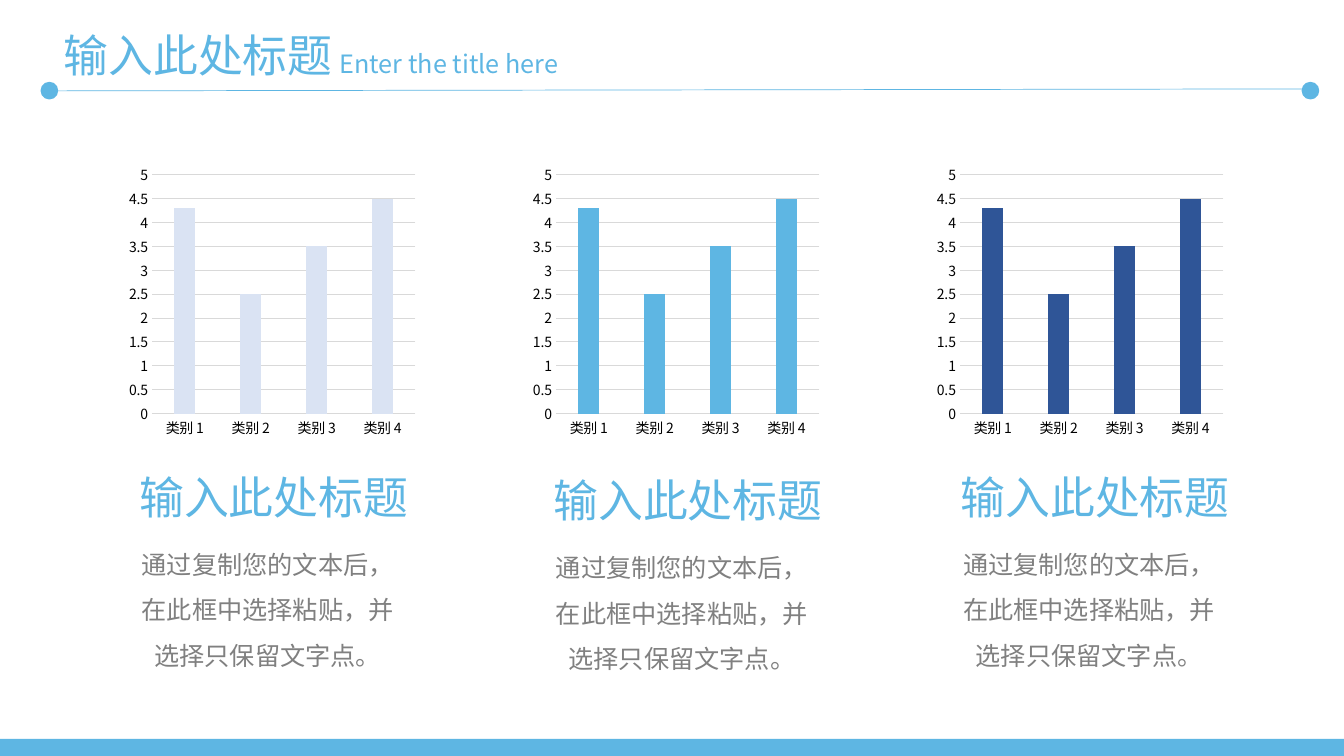
from lxml import etree
from pptx import Presentation
from pptx.chart.data import CategoryChartData
from pptx.dml.color import RGBColor
from pptx.enum.chart import XL_CHART_TYPE, XL_TICK_MARK
from pptx.enum.shapes import MSO_CONNECTOR, MSO_SHAPE
from pptx.enum.text import MSO_ANCHOR, MSO_AUTO_SIZE, PP_ALIGN
from pptx.oxml.ns import qn
from pptx.util import Cm, Pt

FONT = "Noto Sans CJK SC"
SKY = RGBColor(0x5E, 0xB6, 0xE3)
PALE = RGBColor(0xDA, 0xE3, 0xF3)
NAVY = RGBColor(0x2F, 0x55, 0x97)
GRAY = RGBColor(0x80, 0x80, 0x80)
GRID = RGBColor(0xD9, 0xD9, 0xD9)
BLACK = RGBColor(0, 0, 0)

TITLE = "输入此处标题"
SUBTITLE = "Enter the title here"
CATEGORIES = ["类别 1", "类别 2", "类别 3", "类别 4"]
VALUES = [4.3, 2.5, 3.5, 4.5]
HEADING = "输入此处标题"
BODY = "通过复制您的文本后，在此框中选择粘贴，并选择只保留文字点。"

# Bar colour, then left and top of the text block below the chart (cm)
COLUMNS = [(PALE, 3.1, 11.71), (SKY, 13.54, 11.79), (NAVY, 23.8, 11.71)]
CHART_LEFT, CHART_TOP, CHART_STEP = 3.1, 4.01, 10.18
CHART_WIDTH, CHART_HEIGHT = 7.52, 7.16
SLIDE_WIDTH, SLIDE_HEIGHT = 33.87, 19.05
DOT_SIZE, DOT_TOP = 0.41, 2.08
DOT_LEFTS = (1.04, 32.82)


def set_east_asian_font(properties):
    etree.SubElement(properties, qn("a:ea")).set("typeface", FONT)


def write_text(shape, text, size, color, align=PP_ALIGN.LEFT, line_spacing=None):
    frame = shape.text_frame
    frame.text = text
    frame.word_wrap = True
    frame.auto_size = MSO_AUTO_SIZE.SHAPE_TO_FIT_TEXT
    frame.vertical_anchor = MSO_ANCHOR.TOP
    paragraph = frame.paragraphs[0]
    paragraph.alignment = align
    if line_spacing:
        paragraph.line_spacing = line_spacing
    run = paragraph.runs[0]
    run.font.size = Pt(size)
    run.font.color.rgb = color
    run.font.name = FONT
    set_east_asian_font(run.font._element if hasattr(run.font, "_element") else run._r.get_or_add_rPr())


def add_text(slide, left, top, width, height, *style):
    box = slide.shapes.add_textbox(Cm(left), Cm(top), Cm(width), Cm(height))
    write_text(box, *style)


def add_solid(slide, kind, left, top, width, height):
    shape = slide.shapes.add_shape(kind, Cm(left), Cm(top), Cm(width), Cm(height))
    shape.shadow.inherit = False
    shape.fill.solid()
    shape.fill.fore_color.rgb = SKY
    shape.line.fill.background()
    return shape


def add_column_chart(slide, left, color):
    data = CategoryChartData()
    data.categories = CATEGORIES
    data.add_series("Series 1", VALUES)
    chart = slide.shapes.add_chart(
        XL_CHART_TYPE.COLUMN_CLUSTERED, Cm(left), Cm(CHART_TOP),
        Cm(CHART_WIDTH), Cm(CHART_HEIGHT), data).chart
    chart.has_title = False
    chart.has_legend = False
    chart.font.size = Pt(10)
    chart.font.color.rgb = BLACK
    chart.font.name = FONT
    set_east_asian_font(chart.element.xpath("c:txPr//a:defRPr")[0])

    plot = chart.plots[0]
    plot.gap_width = 219
    plot.overlap = -27
    plot.vary_by_categories = False
    fill = plot.series[0].format.fill
    fill.solid()
    fill.fore_color.rgb = color

    value_axis, category_axis = chart.value_axis, chart.category_axis
    for axis in (value_axis, category_axis):
        axis.major_tick_mark = XL_TICK_MARK.NONE
        axis.minor_tick_mark = XL_TICK_MARK.NONE
    value_axis.minimum_scale = 0
    value_axis.maximum_scale = 5
    value_axis.major_unit = 0.5
    value_axis.format.line.fill.background()
    for line in (value_axis.major_gridlines.format.line, category_axis.format.line):
        line.color.rgb = GRID
        line.width = Pt(0.75)


def add_header(slide):
    title = slide.shapes.title
    title.left, title.top, title.width, title.height = Cm(1.35), Cm(0.58), Cm(7.75), Cm(1.63)
    write_text(title, TITLE, 32, SKY)
    add_text(slide, 8.31, 1.09, 6.55, 1.02, SUBTITLE, 18, SKY)

    rule = slide.shapes.add_connector(
        MSO_CONNECTOR.STRAIGHT, Cm(33.22), Cm(2.24), Cm(1.35), Cm(2.29))
    rule.line.color.rgb = SKY
    rule.line.width = Pt(0.5)
    etree.SubElement(rule._element.spPr, qn("a:effectLst"))
    for left in DOT_LEFTS:
        dot = add_solid(slide, MSO_SHAPE.OVAL, left, DOT_TOP, DOT_SIZE, DOT_SIZE)
        dot.line.color.rgb = SKY
        dot.line.width = Pt(1)


def main():
    presentation = Presentation()
    presentation.slide_width = Cm(SLIDE_WIDTH)
    presentation.slide_height = Cm(SLIDE_HEIGHT)
    slide = presentation.slides.add_slide(presentation.slide_layouts[5])

    add_solid(slide, MSO_SHAPE.RECTANGLE, 0, 18.62, SLIDE_WIDTH, 0.48)
    add_header(slide)
    for index, (color, left, top) in enumerate(COLUMNS):
        add_column_chart(slide, CHART_LEFT + index * CHART_STEP, color)
        add_text(slide, left + 0.04, top, 7.52, 1.63, HEADING, 32, SKY, PP_ALIGN.CENTER)
        add_text(slide, left, top + 1.63, 7.29, 3.71, BODY, 18, GRAY, PP_ALIGN.CENTER, 1.5)

    presentation.save("out.pptx")


if __name__ == "__main__":
    main()
